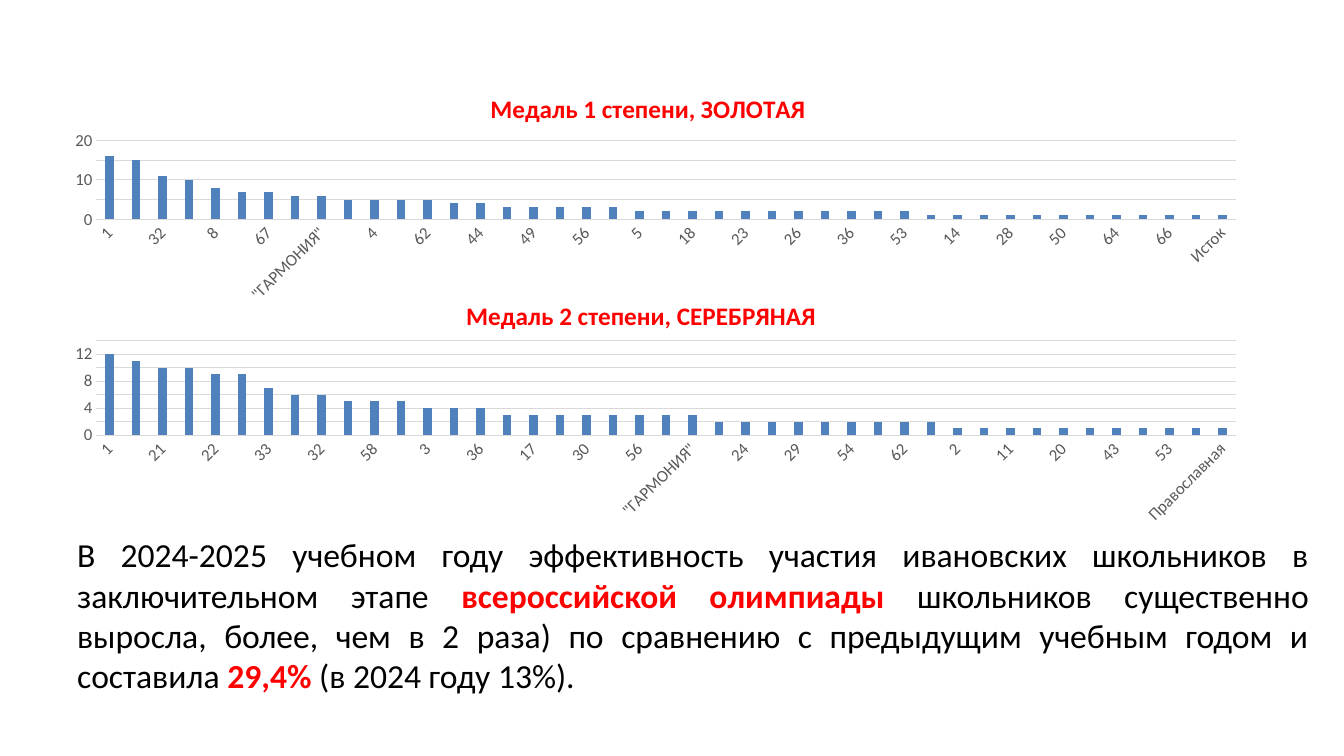
from dataclasses import dataclass

from pptx import Presentation
from pptx.chart.data import CategoryChartData
from pptx.dml.color import RGBColor
from pptx.enum.chart import XL_CHART_TYPE, XL_TICK_MARK
from pptx.enum.text import MSO_AUTO_SIZE, PP_ALIGN
from pptx.oxml import parse_xml
from pptx.oxml.ns import nsdecls, qn
from pptx.util import Pt

FONT = "Calibri"
HUES = {"bar": "4F81BD", "grid": "D9D9D9", "label": "595959",
        "accent": "FF0000", "text": "000000"}


@dataclass
class Medal:
    title: str
    top: float
    height: float
    schools: list[str]
    runs: list[tuple[int, int]]  # (medals, number of schools)
    peak: int
    step: int
    head: dict[str, float]  # title place, as shares of the chart
    plot: dict[str, float]  # plot place, as shares of the chart


MEDALS = [
    Medal("Медаль 1 степени, ЗОЛОТАЯ", 48, 174,
          '1 30 32 21 8 6 67 33 "ГАРМОНИЯ" 3 4 22 62 35 44 39 49 55 56 61 5 7 '
          "18 19 23 24 26 29 36 41 53 11 14 17 28 42 50 54 64 65 66 "
          "Православная Исток".split(),
          [(16, 1), (15, 1), (11, 1), (10, 1), (8, 1), (7, 2), (6, 2),
           (5, 4), (4, 2), (3, 5), (2, 11), (1, 12)],
          20, 5, {"x": 0.36, "y": 0.08},
          {"x": 0.038, "y": 0.301, "w": 0.942, "h": 0.324}),
    Medal("Медаль 2 степени, СЕРЕБРЯНАЯ", 198, 180,
          "1 8 21 67 22 26 33 23 32 5 58 64 3 35 36 4 17 18 30 41 56 61 "
          '"ГАРМОНИЯ" 19 24 28 29 44 54 55 62 Исток 2 7 11 15 20 37 43 49 53 '
          "68 Православная".split(),
          [(12, 1), (11, 1), (10, 2), (9, 2), (7, 1), (6, 2),
           (5, 3), (4, 3), (3, 8), (2, 9), (1, 11)],
          14, 2, {"x": 0.34, "y": 0.065},
          {"x": 0.038, "y": 0.252, "w": 0.942, "h": 0.375}),
]

STORY = [
    ("В 2024-2025 учебном году эффективность участия ивановских школьников "
     "в заключительном этапе ", False),
    ("всероссийской олимпиады ", True),
    ("школьников существенно выросла, более, чем в 2 раза) по сравнению "
     "с предыдущим учебным годом и составила ", False),
    ("29,4%", True),
    (" (в 2024 году 13%).", False),
]


def hue(name: str) -> RGBColor:
    return RGBColor.from_string(HUES[name])


def style(font, size: float, name: str) -> None:
    font.name, font.size = FONT, Pt(size)
    font.color.rgb = hue(name)


def place(part, spot: dict[str, float], index: int, inner: bool) -> None:
    """Give a chart part a manual layout."""
    for old in part.findall(qn("c:layout")):
        part.remove(old)
    target = '<c:layoutTarget val="inner"/>' if inner else ""
    modes = "".join(f'<c:{key}Mode val="edge"/>' for key in "xy")
    sizes = "".join(f'<c:{key} val="{val}"/>' for key, val in spot.items())
    part.insert(index, parse_xml(
        f"<c:layout {nsdecls('c')}><c:manualLayout>{target}{modes}{sizes}"
        "</c:manualLayout></c:layout>"))


def draw_chart(slide, medal: Medal) -> None:
    data = CategoryChartData()
    data.categories = medal.schools
    data.add_series("Медали", [val for val, num in medal.runs
                               for _ in range(num)])
    chart = slide.shapes.add_chart(
        XL_CHART_TYPE.COLUMN_CLUSTERED, Pt(36), Pt(medal.top),
        Pt(864), Pt(medal.height), data).chart
    chart.has_legend = False
    style(chart.font, 10, "text")

    # Title
    chart.has_title = True
    para = chart.chart_title.text_frame.paragraphs[0]
    para.text = medal.title
    style(para.font, 18, "accent")
    para.font.bold = True

    # Bars
    bars = chart.plots[0]
    bars.gap_width, bars.overlap = 219, -27
    bars.vary_by_categories = False
    fill = bars.series[0].format.fill
    fill.solid()
    fill.fore_color.rgb = hue("bar")

    # Axes
    cats, vals = chart.category_axis, chart.value_axis
    for axis in (cats, vals):
        axis.major_tick_mark = axis.minor_tick_mark = XL_TICK_MARK.NONE
        style(axis.tick_labels.font, 12, "label")
    vals.minimum_scale, vals.maximum_scale = 0, medal.peak
    vals.major_unit = medal.step
    vals.has_major_gridlines = True
    vals.format.line.fill.background()
    for line in (cats.format.line, vals.major_gridlines.format.line):
        line.color.rgb, line.width = hue("grid"), Pt(0.75)

    # Slanted labels and fixed places
    turn = cats._element.find(qn("c:txPr")).find(qn("a:bodyPr"))
    turn.set("rot", "-2700000")
    root = chart._chartSpace.find(qn("c:chart"))
    place(root.find(qn("c:title")), medal.head, 1, False)
    place(root.find(qn("c:plotArea")), medal.plot, 0, True)


def draw_story(slide) -> None:
    frame = slide.shapes.add_textbox(
        Pt(48), Pt(378), Pt(894), Pt(124)).text_frame
    frame.word_wrap = True
    frame.auto_size = MSO_AUTO_SIZE.SHAPE_TO_FIT_TEXT
    para = frame.paragraphs[0]
    para.alignment = PP_ALIGN.JUSTIFY
    para.font.name, para.font.size = FONT, Pt(24)
    for text, strong in STORY:
        run = para.add_run()
        run.text = text
        run.font.bold = strong
        run.font.color.rgb = hue("accent" if strong else "text")


def main() -> None:
    deck = Presentation()
    deck.slide_width, deck.slide_height = Pt(960), Pt(540)
    slide = deck.slides.add_slide(deck.slide_layouts[6])
    for medal in MEDALS:
        draw_chart(slide, medal)
    draw_story(slide)
    deck.save("out.pptx")


if __name__ == "__main__":
    main()
